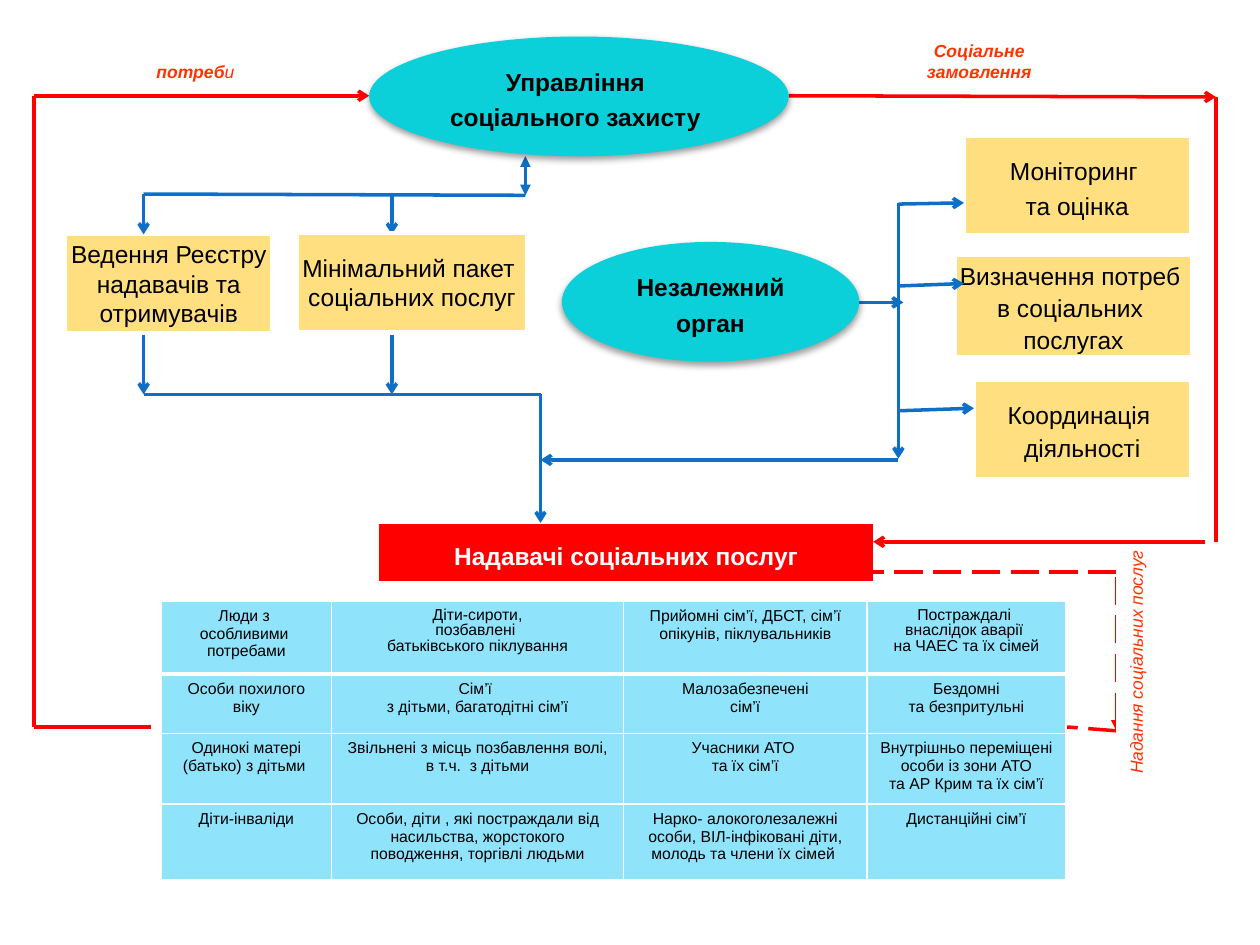
from lxml.etree import SubElement
from pptx import Presentation
from pptx.dml.color import RGBColor
from pptx.enum.dml import MSO_LINE
from pptx.enum.shapes import MSO_CONNECTOR, MSO_SHAPE
from pptx.enum.text import MSO_ANCHOR, PP_ALIGN
from pptx.oxml.ns import qn
from pptx.util import Inches, Pt

FONT = "Arial"
BLACK, WHITE, RED, BLUE = "000000", "FFFFFF", "FF0000", "0F6FC6"
AMBER, TEAL, SKY, ORANGE = "FFC000", "0BD0D9", "20C9F8", "FF3300"

# (left, top, width, height), line spacing, lines of text
REGISTER = (0.52, 1.86, 1.64, 0.78), 1, ["Ведення Реєстру", "надавачів та", "отримувачів"]
PACKAGE = (2.36, 1.85, 1.82, 0.78), 1, ["Мінімальний пакет ", "соціальних послуг"]
TASKS = [
    ((7.58, 2.03, 1.88, 0.8), 1.1, ["Визначення потреб ", "в соціальних ", "послугах"]),
    ((7.65, 1.08, 1.8, 0.78), 1.2, ["Моніторинг ", "та оцінка"]),
    ((7.73, 3.02, 1.72, 0.78), 1.1, ["Координація ", "діяльності"]),
]
BODIES = [
    ((2.93, 0.29, 3.33, 0.95), ["Управління ", "соціального захисту "]),
    ((4.46, 1.92, 2.36, 0.95), ["Незалежний орган"]),
]
PROVIDERS = (3, 4.15, 3.94, 0.47), ["Надавачі соціальних послуг"]

# box, rotation, lines; each line is a list of (text, bold) runs
LABELS = [
    ((1.08, 0.45, 0.98, 0.23), 0, [[("потреб", True), ("и ", False)]]),
    ((8.24, 5.1, 1.55, 0.31), 270, [[("Надання соціальних послуг", False)]]),
    ((7.28, 0.29, 1.02, 0.39), 0, [[("Соціальне ", True)], [("замовлення ", True)]]),
]

COL_WIDTHS = [1.35, 2.32, 1.93, 1.58]
ROW_HEIGHTS = [0.58, 0.47, 0.56, 0.6]
TIGHT_CELLS = {(0, 1), (0, 3)}
RECIPIENTS = [
    ["Люди з \nособливими \nпотребами",
     "Діти-сироти,\nпозбавлені \nбатьківського піклування",
     "Прийомні сім’ї, ДБСТ, сім’ї опікунів, піклувальників",
     "Постраждалі \nвнаслідок аварії \nна ЧАЕС та їх сімей"],
    ["Особи похилого віку",
     "Сім’ї \nз дітьми, багатодітні сім’ї",
     "Малозабезпечені\nсім’ї",
     "Бездомні\nта безпритульні"],
    ["Одинокі матері (батько) з дітьми ",
     "Звільнені з місць позбавлення волі, в т.ч.  з дітьми",
     "Учасники АТО \nта їх сім’ї",
     "Внутрішньо переміщені особи із зони АТО\nта АР Крим та їх сім’ї"],
    ["Діти-інваліди",
     "Особи, діти , які постраждали від насильства, жорстокого поводження, торгівлі людьми",
     "Нарко- алокоголезалежні особи, ВІЛ-інфіковані діти, молодь та члени їх сімей ",
     "Дистанційні сім’ї"],
]

# x1, y1, x2, y2
BLUE_LINES = [(1.14, 1.54, 4.17, 1.55), (1.14, 3.13, 4.29, 3.13)]
BLUE_ARROWS = [
    (1.14, 1.54, 1.14, 1.86), (3.11, 1.54, 3.11, 1.86),
    (1.14, 2.66, 1.14, 3.13), (3.11, 2.66, 3.11, 3.13),
    (4.29, 3.13, 4.29, 4.15), (6.7, 2.4, 7.17, 2.4),
    (7.13, 1.61, 7.13, 3.64), (7.13, 3.65, 4.29, 3.65),
    (7.13, 1.62, 7.65, 1.61), (7.13, 2.27, 7.65, 2.25), (7.14, 3.26, 7.73, 3.24),
]
RED_LINES = [(0.27, 5.77, 1.2, 5.77), (0.27, 5.77, 0.27, 0.76), (9.65, 4.3, 9.65, 0.77)]
RED_ARROWS = [(0.27, 0.76, 2.93, 0.76), (6.26, 0.76, 9.65, 0.77), (9.56, 4.3, 6.93, 4.3)]
RED_DASHES = [(8.86, 5.8, 8.47, 5.77), (8.86, 4.54, 6.93, 4.54)]


def rgb(color):
    return RGBColor.from_string(color)


def paint(fill, color, alpha=None):
    fill.solid()
    fill.fore_color.rgb = rgb(color)
    if alpha:
        clr = fill._xPr.find(qn("a:solidFill")).find(qn("a:srgbClr"))
        SubElement(clr, qn("a:alpha"), val=str(alpha * 1000))


def write(tf, lines, size, color, bold=False, italic=False, spacing=1):
    """Fill a text frame; a line is a string or a list of (text, bold) runs."""
    for i, line in enumerate(lines):
        p = tf.paragraphs[0] if i == 0 else tf.add_paragraph()
        p.alignment = PP_ALIGN.CENTER
        p.line_spacing = float(spacing)
        for text, heavy in [(line, bold)] if isinstance(line, str) else line:
            r = p.add_run()
            r.text = text
            r.font.name, r.font.size = FONT, Pt(size)
            r.font.bold, r.font.italic = heavy, italic
            r.font.color.rgb = rgb(color)


def add_node(box, fill, kind=MSO_SHAPE.RECTANGLE, alpha=None, border=None, wrap=True):
    sp = s.shapes.add_shape(kind, *map(Inches, box))
    sp.shadow.inherit = False
    paint(sp.fill, fill, alpha)
    if border:
        sp.line.color.rgb = rgb(WHITE)
        sp.line.width = Pt(border)
    else:
        sp.line.fill.background()
    sp.text_frame.word_wrap = wrap
    sp.text_frame.vertical_anchor = MSO_ANCHOR.MIDDLE
    return sp


def add_task(box, spacing, lines):
    sp = add_node(box, AMBER, alpha=50, border=2, wrap=False)
    write(sp.text_frame, lines, 14, BLACK, spacing=spacing)


def add_body(box, lines):
    """Ellipse with a soft shadow below it."""
    sp = add_node(box, TEAL, MSO_SHAPE.OVAL)
    effects = sp._element.spPr.find(qn("a:effectLst"))
    shadow = SubElement(effects, qn("a:outerShdw"), blurRad=str(Pt(4)), dist=str(Pt(2)),
                        dir="5400000", rotWithShape="0")
    clr = SubElement(shadow, qn("a:srgbClr"), val=BLACK)
    SubElement(clr, qn("a:alpha"), val="38000")
    write(sp.text_frame, lines, 14, BLACK, bold=True, spacing=1.2)


def add_line(ends, color, head=None, tail=None, dashed=False):
    cxn = s.shapes.add_connector(MSO_CONNECTOR.STRAIGHT, *map(Inches, ends))
    cxn.line.color.rgb = rgb(color)
    cxn.line.width = Pt(2)
    if dashed:
        cxn.line.dash_style = MSO_LINE.LONG_DASH
    ln = cxn.line._get_or_add_ln()
    for tag, arrow in (("a:headEnd", head), ("a:tailEnd", tail)):
        if arrow:
            SubElement(ln, qn(tag), type=arrow)
    SubElement(cxn._element.spPr, qn("a:effectLst"))


def add_recipients():
    table = s.shapes.add_table(len(ROW_HEIGHTS), len(COL_WIDTHS), Inches(1.28), Inches(4.77),
                               Inches(sum(COL_WIDTHS)), Inches(sum(ROW_HEIGHTS))).table
    table.first_row = table.horz_banding = False
    for col, width in zip(table.columns, COL_WIDTHS):
        col.width = Inches(width)
    for i, row in enumerate(RECIPIENTS):
        table.rows[i].height = Inches(ROW_HEIGHTS[i])
        for j, text in enumerate(row):
            cell = table.cell(i, j)
            write(cell.text_frame, text.split("\n"), 9, BLACK,
                  spacing=0.9 if (i, j) in TIGHT_CELLS else 1)
            widths = {"L": 1, "R": 1, "T": 3 if i == 1 else 1, "B": 3 if i == 0 else 1}
            for side, width in widths.items():
                ln = SubElement(cell._tc.get_or_add_tcPr(), qn("a:ln" + side), w=str(Pt(width)))
                SubElement(SubElement(ln, qn("a:solidFill")), qn("a:srgbClr"), val=WHITE)
            paint(cell.fill, SKY, 50)


prs = Presentation()
prs.slide_width, prs.slide_height = Inches(10), Inches(7.5)
s = prs.slides.add_slide(prs.slide_layouts[6])

for task in [REGISTER, *TASKS]:
    add_task(*task)
add_recipients()
providers_box, providers_lines = PROVIDERS
providers = add_node(providers_box, RED, border=1.25)
write(providers.text_frame, providers_lines, 14, WHITE, bold=True, spacing=1.2)

for color, lines, arrows in ((BLUE, BLUE_LINES, BLUE_ARROWS), (RED, RED_LINES, RED_ARROWS)):
    for ends in lines:
        add_line(ends, color)
    for ends in arrows:
        add_line(ends, color, tail="arrow")
for ends in RED_DASHES:
    add_line(ends, RED, dashed=True)
add_line((8.86, 5.8, 8.86, 4.54), RED, head="triangle", dashed=True)
add_line((4.17, 1.24, 4.17, 1.55), BLUE, head="triangle", tail="triangle")

for box, rotation, lines in LABELS:
    label = add_node(box, WHITE, border=0.75, wrap=False)
    label.rotation = rotation
    write(label.text_frame, lines, 10, ORANGE, italic=True)
add_task(*PACKAGE)
for body in BODIES:
    add_body(*body)

prs.save("out.pptx")
